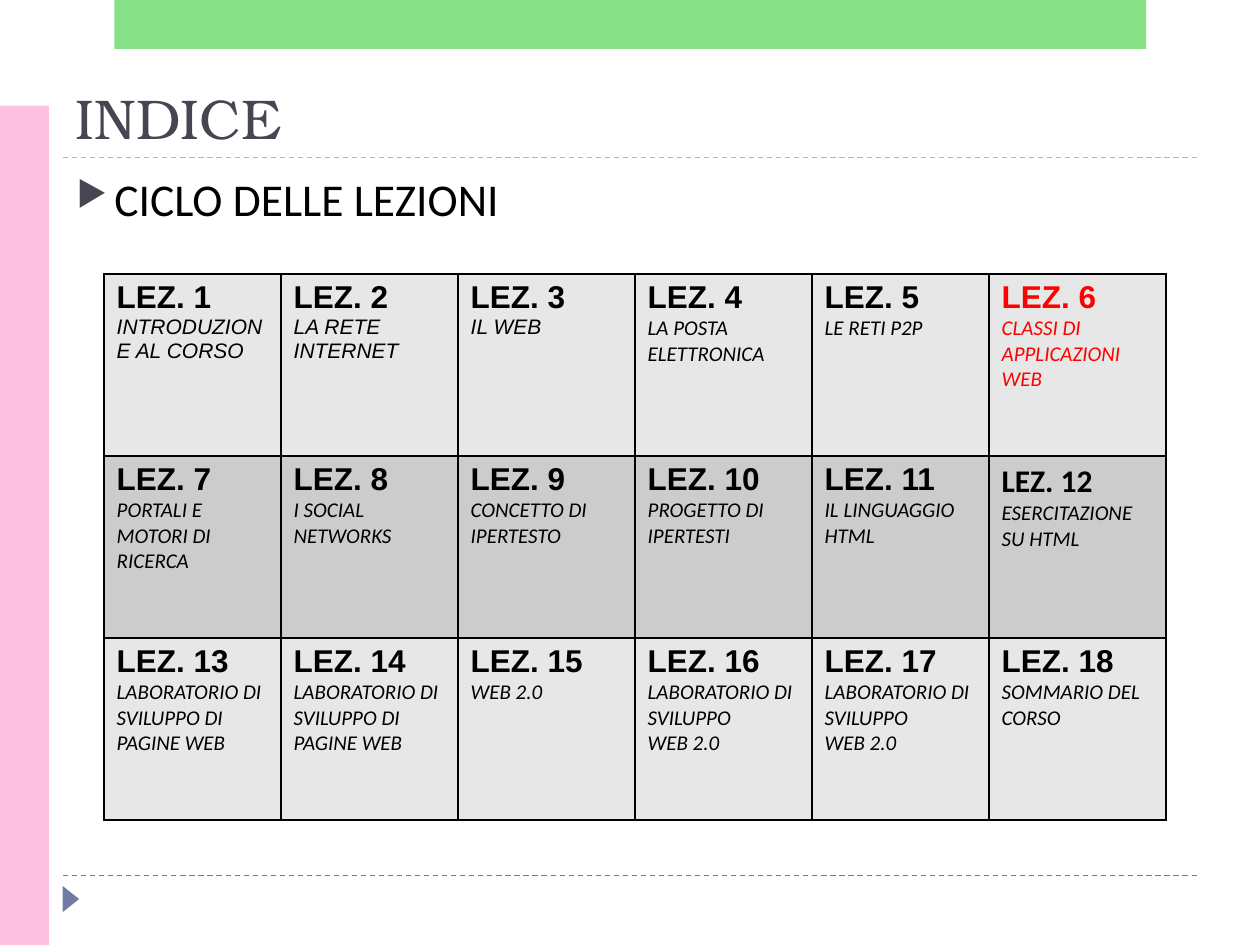
from lxml import etree
from pptx import Presentation
from pptx import util as u
from pptx.dml.color import RGBColor
from pptx.enum import dml, shapes, text
from pptx.oxml import ns

Pt = u.Pt
HUE = {"ink": "000000", "title": "464653", "mark": "727CA3", "rule": "9FB8CD",
       "pink": "FFC1E0", "green": "62D862", "red": "FF0000",
       "light": "E7E7E7", "dark": "CCCCCC"}


def rgb(name):
    return RGBColor.from_string(HUE[name])


def put(par, words, font, size, hue, bold=False, ital=False):
    run = par.add_run()
    run.text = words
    run.font.name = font
    run.font.size = Pt(size)
    run.font.bold = bold
    run.font.italic = ital
    run.font.color.rgb = rgb(hue)


deck = Presentation()
deck.slide_width, deck.slide_height = Pt(720), Pt(540)
slide = deck.slides.add_slide(deck.slide_layouts[5])
items = slide.shapes

for y, hue in ((500.4, "mark"), (90, "rule")):
    rule = items.add_connector(shapes.MSO_CONNECTOR.STRAIGHT, Pt(36), Pt(y), Pt(684), Pt(y))
    rule.line.color.rgb = rgb(hue)
    rule.line.width = Pt(0.75)
    rule.line.dash_style = dml.MSO_LINE.DASH
    etree.SubElement(rule._element.spPr, ns.qn("a:effectLst"))

KIND = shapes.MSO_SHAPE
for kind, box, hue, turn in (
    (KIND.ISOSCELES_TRIANGLE, (33, 509, 15, 9.5), "mark", 90),
    (KIND.RECTANGLE, (0, 60.3, 28, 479.7), "pink", 0),
    (KIND.RECTANGLE, (65.3, 0, 589.7, 28), "green", 0),
):
    form = items.add_shape(kind, *map(Pt, box))
    form.rotation = turn
    form.shadow.inherit = False
    form.fill.solid()
    form.fill.fore_color.rgb = rgb(hue)
    form.line.fill.background()
    if hue == "green":
        tint = form._element.spPr.find(".//" + ns.qn("a:srgbClr"))
        etree.SubElement(tint, ns.qn("a:alpha"), val="76000")

title = items.title
title.left, title.top, title.width, title.height = map(Pt, (36, 39.6, 648, 50.4))
frame = title.text_frame
frame.auto_size = text.MSO_AUTO_SIZE.NONE
frame.vertical_anchor = text.MSO_ANCHOR.BOTTOM
par = frame.paragraphs[0]
par.alignment = text.PP_ALIGN.LEFT
put(par, "INDICE", "TeX Gyre Bonum", 32, "title")

body = items.add_textbox(*map(Pt, (36.7, 94.3, 648, 57))).text_frame
body.word_wrap = True
par = body.paragraphs[0]
props = par._p.get_or_add_pPr()
props.set("marL", str(Pt(21.6)))
props.set("indent", str(-Pt(21.6)))
tint = etree.SubElement(props, ns.qn("a:buClr"))
etree.SubElement(tint, ns.qn("a:srgbClr"), val=HUE["title"])
etree.SubElement(props, ns.qn("a:buSzPct"), val="76000")
etree.SubElement(props, ns.qn("a:buChar"), char="▶")
put(par, "CICLO DELLE LEZIONI", "Calibri", 26, "ink")

LABS = "LABORATORIO DI SVILUPPO"
topics = [
    ["INTRODUZIONE AL CORSO", "LA RETE INTERNET", "IL WEB",
     "LA POSTA ELETTRONICA", "LE RETI P2P", "CLASSI DI APPLICAZIONI WEB"],
    ["PORTALI E MOTORI DI RICERCA", "I SOCIAL NETWORKS", "CONCETTO DI IPERTESTO",
     "PROGETTO DI IPERTESTI", "IL LINGUAGGIO HTML", "ESERCITAZIONE SU HTML"],
    [LABS + " DI PAGINE WEB", LABS + " DI PAGINE WEB", "WEB 2.0",
     LABS + "\nWEB 2.0", LABS + "\nWEB 2.0", "SOMMARIO DEL CORSO"],
]
grid = items.add_table(3, 6, Pt(59.5), Pt(156.6), Pt(606.9), Pt(312)).table
grid.first_row = grid.horz_banding = False
for col in grid.columns:
    col.width = Pt(101.15)
for row in grid.rows:
    row.height = Pt(104)

for r, line in enumerate(topics):
    for c, topic in enumerate(line):
        num = r * 6 + c + 1
        cell = grid.cell(r, c)
        props = cell._tc.get_or_add_tcPr()
        for side in ("lnL", "lnR", "lnT", "lnB"):
            edge = etree.SubElement(props, ns.qn("a:" + side), w=str(Pt(1)))
            fill = etree.SubElement(edge, ns.qn("a:solidFill"))
            etree.SubElement(fill, ns.qn("a:srgbClr"), val=HUE["ink"])
        cell.fill.solid()
        cell.fill.fore_color.rgb = rgb("dark" if r == 1 else "light")
        hue = "red" if num == 6 else "ink"
        frame = cell.text_frame
        put(frame.paragraphs[0], f"LEZ. {num}", "Calibri" if num == 12 else "Arial",
            18, hue, bold=True)
        par = frame.add_paragraph()
        for i, part in enumerate(topic.split("\n")):
            if i:
                par.add_line_break()
            put(par, part, "Arial" if num < 4 else "Calibri", 12, hue, ital=True)

deck.save("out.pptx")
